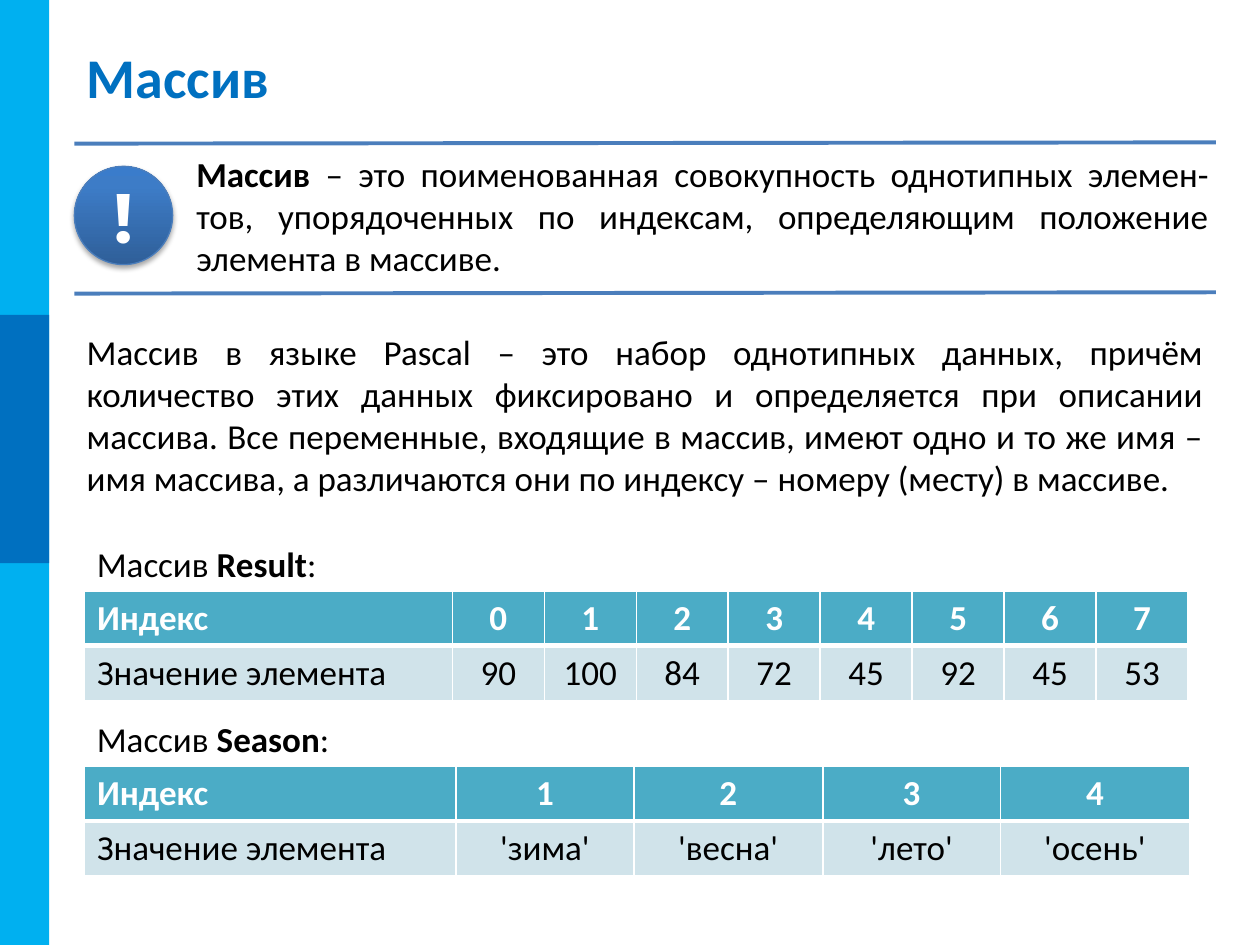
from dataclasses import dataclass
from copy import deepcopy

from lxml import etree
from pptx import Presentation, util as u
from pptx.dml.color import RGBColor
from pptx.enum import shapes, text
from pptx.oxml import ns

COLUMNS, ROWS = 100, 75  # grid laid over the slide
CELL = u.Inches(0.1)


@dataclass(frozen=True)
class Theme:
    font: str = "Calibri"
    mark_font: str = "Montserrat"
    title_size: int = 32
    body_size: int = 20
    mark_size: int = 40
    black: str = "000000"
    white: str = "FFFFFF"
    side: str = "00B0F0"
    accent: str = "0070C0"
    rule: str = "4B7EBC"
    mark_stops: tuple = ((0, "2F5F99"), (0.8, "3D7CC7"), (1, "3A7CCB"))
    header: str = "4BACC6"
    values: str = "D0E3EA"


@dataclass(frozen=True)
class Box:
    """Place on the grid, in columns and rows."""
    left: float
    top: float
    width: float
    height: float

    def emu(self) -> list:
        return [grid(n) for n in (self.left, self.top, self.width, self.height)]


@dataclass(frozen=True)
class ArrayTable:
    name: str
    top: float
    widths: tuple
    indexes: tuple
    values: tuple


THEME = Theme()
LEFT, WIDTH = 5.9, 90.6  # main text column
TABLE_LEFT, CAPTION_HEIGHT, TABLE_ROW = 6.7, 4.4, 4.35
ALIGN = text.PP_ALIGN
MIDDLE = text.MSO_ANCHOR.MIDDLE

ARRAYS = (
    ArrayTable("Result", 46.9, (29.2,) + (7.3,) * 8, tuple("01234567"),
               ("90", "100", "84", "72", "45", "92", "45", "53")),
    ArrayTable("Season", 60.8, (29.5,) + (14.1, 15) * 2, tuple("1234"),
               ("'зима'", "'весна'", "'лето'", "'осень'")),
)


def grid(cells: float) -> int:
    return round(cells * CELL)


def rgb(color: str) -> RGBColor:
    return RGBColor.from_string(color)


def style(span, size: int, color: str, bold: bool = False, font: str = THEME.font) -> None:
    span.font.name, span.font.size, span.font.bold = font, u.Pt(size), bold
    span.font.color.rgb = rgb(color)


def add_text(page, box: Box, spans: list, align=ALIGN.LEFT) -> None:
    """Text box with one paragraph of (wording, bold) spans."""
    frame = page.shapes.add_textbox(*box.emu()).text_frame
    frame.word_wrap = True
    para = frame.paragraphs[0]
    para.alignment = align
    for wording, bold in spans:
        span = para.add_run()
        span.text = wording
        style(span, THEME.body_size, THEME.black, bold)


def add_block(page, box: Box, color: str) -> None:
    block = page.shapes.add_shape(shapes.MSO_SHAPE.RECTANGLE, *box.emu())
    block.shadow.inherit = False
    block.fill.solid()
    block.fill.fore_color.rgb = rgb(color)
    block.line.fill.background()


def add_rule(page, row: float) -> None:
    rule = page.shapes.add_connector(
        shapes.MSO_CONNECTOR.STRAIGHT, grid(LEFT), grid(row), grid(LEFT + WIDTH), grid(row - 0.1))
    rule.line.color.rgb = rgb(THEME.rule)
    rule.line.width = u.Pt(2.25)
    etree.SubElement(rule._element.spPr, ns.qn("a:effectLst"))


def add_mark(page, box: Box) -> None:
    """Round exclamation mark with a gradient and a soft shadow."""
    mark = page.shapes.add_shape(shapes.MSO_SHAPE.OVAL, *box.emu())
    mark.line.color.rgb = rgb(THEME.rule)
    mark.line.width = u.Pt(0.75)
    mark.fill.gradient()
    mark.fill.gradient_angle = 90
    properties = mark._element.spPr
    stops = properties.find(".//" + ns.qn("a:gsLst"))
    stops.append(deepcopy(stops[-1]))
    for stop, (position, color) in zip(mark.fill.gradient_stops, THEME.mark_stops):
        stop.position = position
        stop.color.rgb = rgb(color)

    mark.shadow.inherit = False
    shadow = etree.SubElement(
        properties.find(ns.qn("a:effectLst")), ns.qn("a:outerShdw"),
        blurRad=str(u.Pt(3.1)), dist=str(u.Pt(1.8)), dir="5400000", rotWithShape="0")
    tint = etree.SubElement(shadow, ns.qn("a:srgbClr"), val=THEME.black)
    etree.SubElement(tint, ns.qn("a:alpha"), val="35000")

    frame = mark.text_frame
    frame.text = "!"
    frame.vertical_anchor = MIDDLE
    frame.margin_left = frame.margin_right = frame.margin_top = frame.margin_bottom = 0
    frame.paragraphs[0].alignment = ALIGN.CENTER
    style(frame.paragraphs[0].runs[0], THEME.mark_size, THEME.white, True, THEME.mark_font)


def set_borders(cell, top: float, bottom: float) -> None:
    for edge, width in (("L", 1), ("R", 1), ("T", top), ("B", bottom)):
        line = etree.SubElement(cell._tc.get_or_add_tcPr(), ns.qn("a:ln" + edge), w=str(u.Pt(width)))
        fill = etree.SubElement(line, ns.qn("a:solidFill"))
        etree.SubElement(fill, ns.qn("a:srgbClr"), val=THEME.white)


def add_array(page, array: ArrayTable) -> None:
    """Caption and two-row table of indexes and values."""
    caption = Box(TABLE_LEFT, array.top - CAPTION_HEIGHT + 0.05, 89, CAPTION_HEIGHT)
    add_text(page, caption, [("Массив ", False), (array.name, True), (":", False)])

    box = Box(TABLE_LEFT, array.top, sum(array.widths), 2 * TABLE_ROW)
    table = page.shapes.add_table(2, len(array.widths), *box.emu()).table
    for column, width in zip(table.columns, array.widths):
        column.width = grid(width)
    rows = (
        (("Индекс",) + array.indexes, THEME.header, THEME.white, True, 1, 3),
        (("Значение элемента",) + array.values, THEME.values, THEME.black, False, 3, 1),
    )
    for r, (wordings, fill, color, bold, top, bottom) in enumerate(rows):
        for c, wording in enumerate(wordings):
            cell = table.cell(r, c)
            set_borders(cell, top, bottom)
            cell.fill.solid()
            cell.fill.fore_color.rgb = rgb(fill)
            cell.text = wording
            cell.vertical_anchor = MIDDLE
            para = cell.text_frame.paragraphs[0]
            para.alignment = ALIGN.CENTER if c else ALIGN.LEFT
            style(para.runs[0], THEME.body_size, color, bold)


def set_title(page, wording: str, box: Box) -> None:
    title = page.shapes.title
    title.left, title.top, title.width, title.height = box.emu()
    title.text_frame.text = wording
    title.text_frame.vertical_anchor = MIDDLE
    para = title.text_frame.paragraphs[0]
    para.alignment = ALIGN.LEFT
    style(para.runs[0], THEME.title_size, THEME.accent, True)


def main() -> None:
    deck = Presentation()
    deck.slide_width, deck.slide_height = grid(COLUMNS), grid(ROWS)
    page = deck.slides.add_slide(deck.slide_layouts.get_by_name("Title Only"))

    # Side band and title
    add_block(page, Box(0, 0, 3.9, ROWS), THEME.side)
    add_block(page, Box(0, 25, 3.9, 19.7), THEME.accent)
    set_title(page, "Массив", Box(LEFT, 3, WIDTH, 6.1))

    # Definition between two rules
    add_text(page, Box(14.6, 11.6, 82.3, 11.7), [
        ("Массив", True),
        (" – это поименованная совокупность однотипных элемен-тов, упорядоченных "
         "по индексам, определяющим положение элемента в массиве.", False),
    ], ALIGN.JUSTIFY)
    add_mark(page, Box(LEFT, 13.2, 7.8, 7.8))
    for row in (11.4, 23.3):
        add_rule(page, row)

    # Explanation
    add_text(page, Box(LEFT, 25.7, WIDTH, 15.7), [
        ("Массив в языке Pascal – это набор однотипных данных, причём количество этих "
         "данных фиксировано и определяется при описании массива. Все переменные, "
         "входящие в массив, имеют одно и то же имя – имя массива, а различаются они "
         "по индексу – номеру (месту) в массиве.", False),
    ], ALIGN.JUSTIFY)

    # Example arrays
    for array in ARRAYS:
        add_array(page, array)

    deck.save("out.pptx")


if __name__ == "__main__":
    main()
